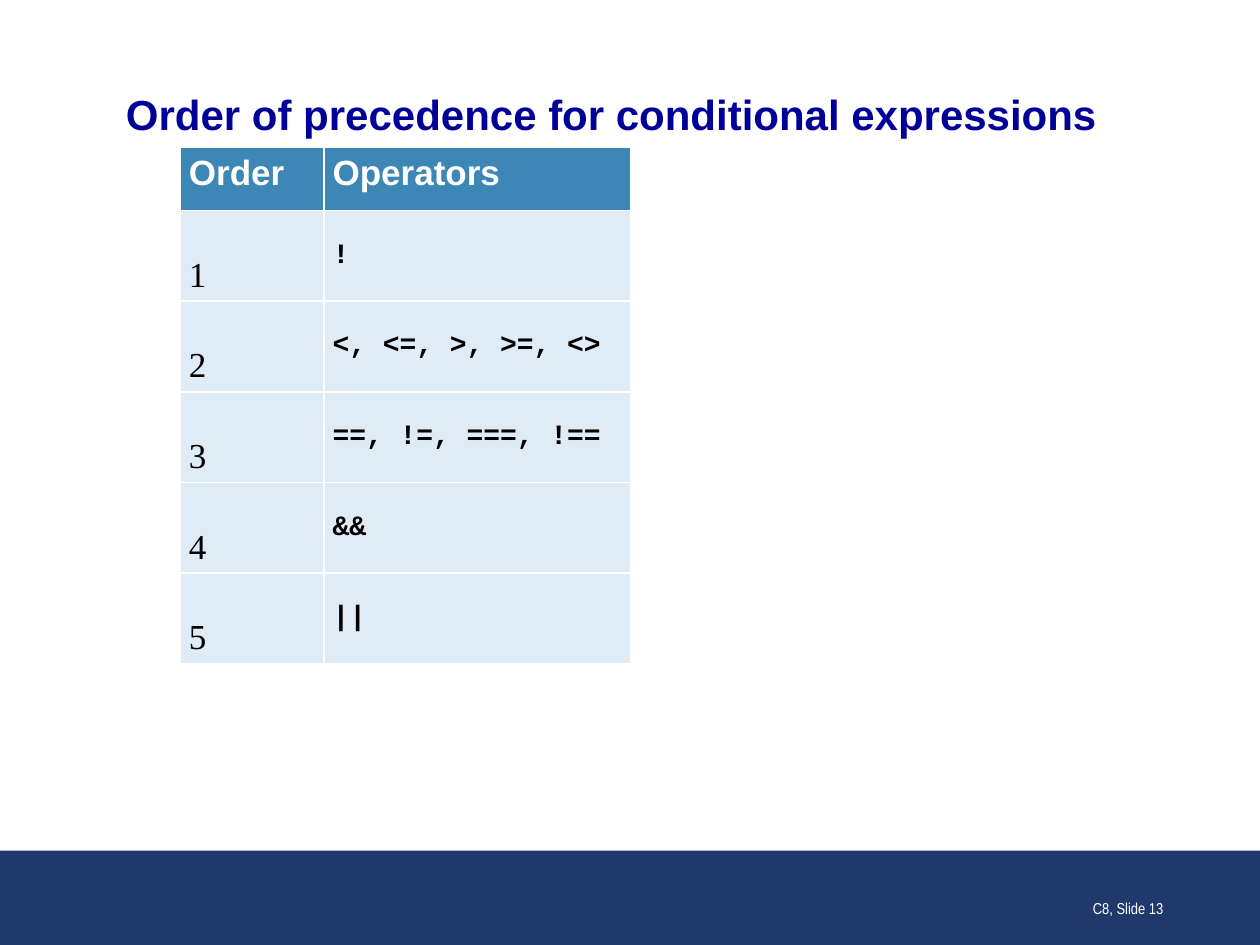
from pptx import Presentation
from pptx.dml.color import RGBColor
from pptx.enum.shapes import MSO_SHAPE
from pptx.enum.text import MSO_ANCHOR, PP_ALIGN
from pptx.util import Inches, Pt

WHITE = RGBColor(0xFF, 0xFF, 0xFF)
BLACK = RGBColor(0x00, 0x00, 0x00)
TITLE_BLUE = RGBColor(0x00, 0x00, 0x99)
FOOTER_NAVY = RGBColor(0x20, 0x39, 0x6D)
HEADER_BLUE = RGBColor(0x3D, 0x87, 0xB7)
BODY_BLUE = RGBColor(0xDF, 0xEC, 0xF5)

HEADINGS = ["Order", "Operators"]
OPERATORS = ["!", "<, <=, >, >=, <>", "==, !=, ===, !==", "&&", "||"]
COLUMN_WIDTHS = [1.14, 2.44]
HEADER_HEIGHT = 0.5
ROW_HEIGHT = 0.72

HEADING_FORMAT = dict(size=20, bold=True, color=WHITE)
NUMBER_FORMAT = dict(font="Times New Roman", size=20)
OPERATOR_FORMAT = dict(font="Courier New", size=16, bold=True)


def write_text(frame, text, font="Arial", size=20, bold=False, color=BLACK,
               align=PP_ALIGN.LEFT):
    para = frame.paragraphs[0]
    para.alignment = align
    span = para.add_run()
    span.text = text
    span.font.name = font
    span.font.size = Pt(size)
    span.font.bold = bold
    span.font.color.rgb = color


class SlideBuilder:
    def __init__(self, deck):
        self.page = deck.slides.add_slide(deck.slide_layouts[6])

    def band(self, left, top, width, height, color):
        shape = self.page.shapes.add_shape(
            MSO_SHAPE.RECTANGLE, Inches(left), Inches(top), Inches(width), Inches(height))
        shape.shadow.inherit = False
        shape.fill.solid()
        shape.fill.fore_color.rgb = color
        shape.line.fill.background()

    def text(self, text, left, top, width, height, anchor, inset=0, **style):
        box = self.page.shapes.add_textbox(
            Inches(left), Inches(top), Inches(width), Inches(height))
        frame = box.text_frame
        frame.word_wrap = True
        frame.vertical_anchor = anchor
        frame.margin_left = frame.margin_right = Inches(inset)
        frame.margin_top = frame.margin_bottom = Inches(inset / 2)
        write_text(frame, text, **style)

    def cell(self, cell, text, fill, anchor, **style):
        cell.fill.solid()
        cell.fill.fore_color.rgb = fill
        cell.vertical_anchor = anchor
        cell.margin_left = cell.margin_right = Inches(0.07)
        cell.margin_top = cell.margin_bottom = Inches(0.05)
        write_text(cell.text_frame, text, **style)

    def precedence_table(self, left, top):
        heights = [HEADER_HEIGHT] + [ROW_HEIGHT] * len(OPERATORS)
        table = self.page.shapes.add_table(
            len(heights), len(COLUMN_WIDTHS), Inches(left), Inches(top),
            Inches(sum(COLUMN_WIDTHS)), Inches(sum(heights))).table
        table.horz_banding = False
        for column, width in zip(table.columns, COLUMN_WIDTHS):
            column.width = Inches(width)
        for row, height in zip(table.rows, heights):
            row.height = Inches(height)
        for column, heading in enumerate(HEADINGS):
            self.cell(table.cell(0, column), heading, HEADER_BLUE, MSO_ANCHOR.TOP,
                      **HEADING_FORMAT)
        for order, operators in enumerate(OPERATORS, start=1):
            self.cell(table.cell(order, 0), str(order), BODY_BLUE, MSO_ANCHOR.BOTTOM,
                      **NUMBER_FORMAT)
            self.cell(table.cell(order, 1), operators, BODY_BLUE, MSO_ANCHOR.MIDDLE,
                      **OPERATOR_FORMAT)


def main():
    deck = Presentation()
    deck.slide_width = Inches(10)
    deck.slide_height = Inches(7.5)
    builder = SlideBuilder(deck)
    builder.band(0, 6.75, 10, 0.75, FOOTER_NAVY)
    builder.text("Order of precedence for conditional expressions", 1, 0.7, 8, 0.4,
                 MSO_ANCHOR.MIDDLE, size=24, bold=True, color=TITLE_BLUE)
    builder.precedence_table(1.43, 1.17)
    builder.text("C8, Slide 13", 7.25, 6.83, 2.08, 0.5, MSO_ANCHOR.BOTTOM, inset=0.1,
                 font="Arial Narrow", size=9, color=WHITE, align=PP_ALIGN.RIGHT)
    deck.save("out.pptx")


if __name__ == "__main__":
    main()
